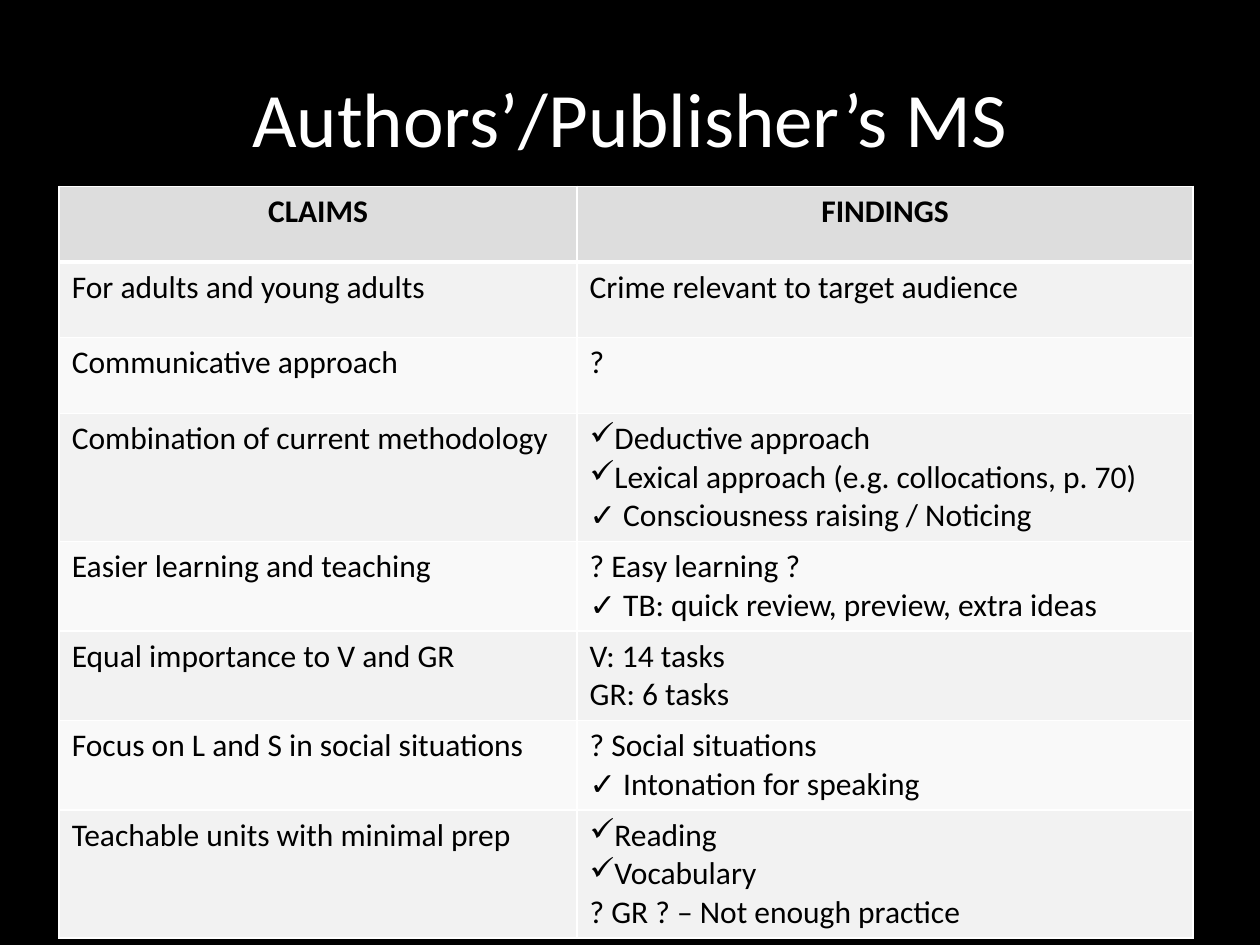
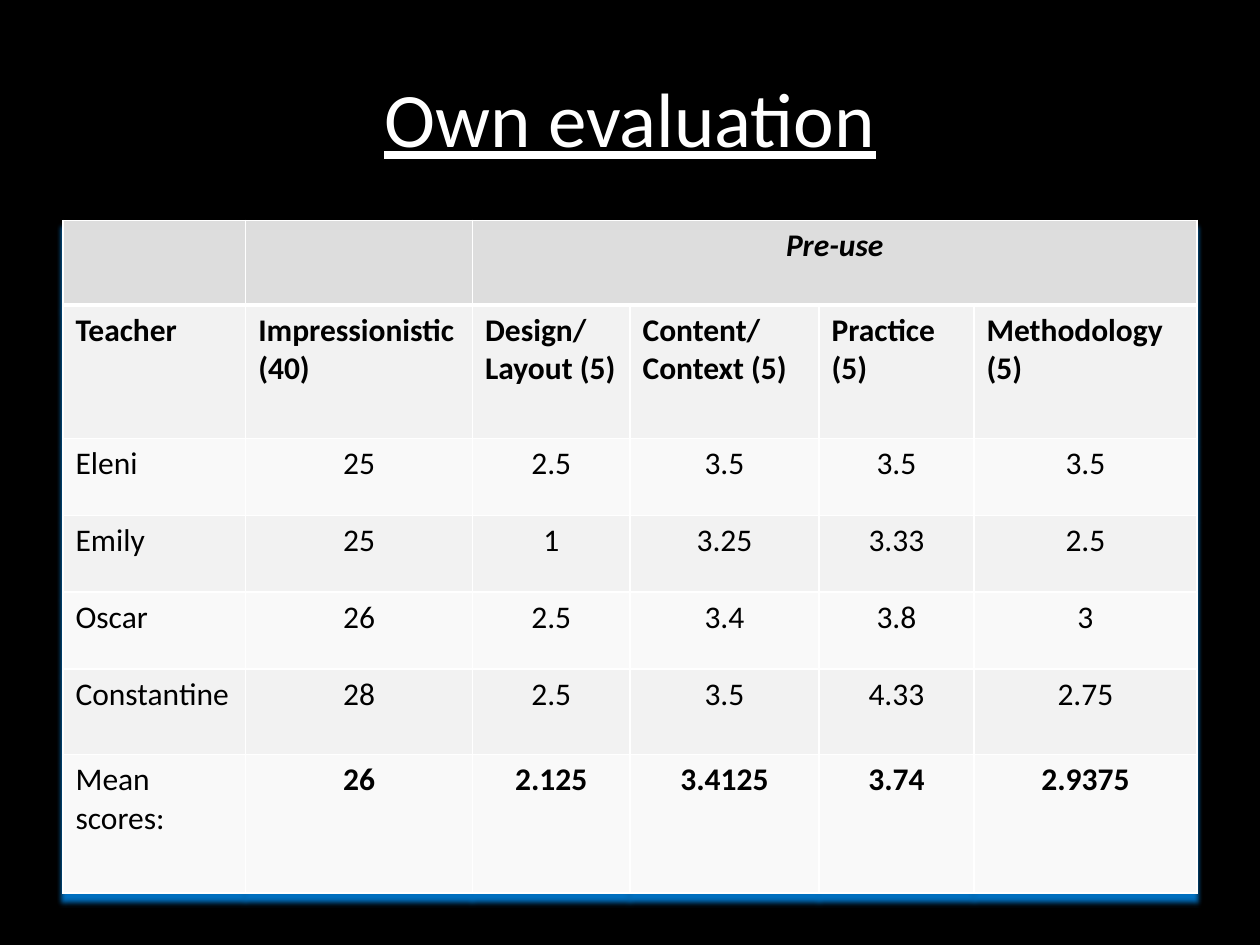
from lxml import etree
from pptx import Presentation
from pptx.dml.color import RGBColor
from pptx.enum.text import MSO_ANCHOR, PP_ALIGN
from pptx.oxml.ns import qn
from pptx.util import Inches, Pt

CENTER, LEFT = PP_ALIGN.CENTER, PP_ALIGN.LEFT
MIDDLE = MSO_ANCHOR.MIDDLE
FONT = "Calibri"
TICK = "✓"
TITLE_ONLY = 5
COLORS = {
    "background": "000000",
    "title": "FFFFFF",
    "text": "000000",
    "border": "FFFFFF",
    "header": "DDDDDD",
    "odd": "F2F2F2",
    "even": "F9F9F9",
    "shadow": "0070C0",
}

CLAIMS = [
    ("CLAIMS", ["FINDINGS"]),
    ("For adults and young adults", ["Crime relevant to target audience"]),
    ("Communicative approach", ["?"]),
    ("Combination of current methodology",
     ["✓Deductive approach", "✓Lexical approach (e.g. collocations, p. 70)",
      "✓ Consciousness raising / Noticing"]),
    ("Easier learning and teaching",
     ["? Easy learning ?", "✓ TB: quick review, preview, extra ideas"]),
    ("Equal importance to V and GR", ["V: 14 tasks", "GR: 6 tasks"]),
    ("Focus on L and S in social situations",
     ["? Social situations", "✓ Intonation for speaking"]),
    ("Teachable units with minimal prep",
     ["✓Reading", "✓Vocabulary", "? GR ? – Not enough practice"]),
]

SCORES = [
    ["", "", "Pre-use", "", "", ""],
    ["Teacher", "Impressionistic (40)", "Design/ Layout (5)",
     "Content/ Context (5)", "Practice (5)", "Methodology (5)"],
    ["Eleni", "25", "2.5", "3.5", "3.5", "3.5"],
    ["Emily", "25", "1", "3.25", "3.33", "2.5"],
    ["Oscar", "26", "2.5", "3.4", "3.8", "3"],
    ["Constantine", "28", "2.5", "3.5", "4.33", "2.75"],
    ["Mean scores:", "26", "2.125", "3.4125", "3.74", "2.9375"],
]


def rgb(name):
    """Return the named colour."""
    return RGBColor.from_string(COLORS[name])


def style_font(font, size, color, bold=False):
    """Apply the shared typeface with a size, colour and weight."""
    font.name, font.size, font.bold = FONT, Pt(size), bold
    font.color.rgb = rgb(color)


def add_title_slide(prs, title, underline=False):
    """Add a title-only slide with the shared title style."""
    s = prs.slides.add_slide(prs.slide_layouts[TITLE_ONLY])
    sp = s.shapes.title
    sp.left, sp.top, sp.width, sp.height = map(Inches, (0.5, 0.3, 9, 1.25))
    tf = sp.text_frame
    tf.text = title
    tf.vertical_anchor = MIDDLE
    p = tf.paragraphs[0]
    p.alignment = CENTER
    style_font(p.font, 44, "title")
    p.font.underline = underline
    return s


def add_color(parent, name):
    """Append a named colour element to an XML parent."""
    etree.SubElement(parent, qn("a:srgbClr"), val=COLORS[name])


def set_borders(cell, row):
    """Draw white cell borders, thicker under the header row."""
    tcPr = cell._tc.get_or_add_tcPr()
    widths = {"L": 1, "R": 1, "T": 3 if row == 1 else 1, "B": 3 if row == 0 else 1}
    for side, width in widths.items():
        ln = etree.SubElement(tcPr, qn(f"a:ln{side}"), w=str(Pt(width)))
        add_color(etree.SubElement(ln, qn("a:solidFill")), "border")


def set_tick_bullet(p):
    """Give a paragraph a tick bullet without an indent."""
    pPr = p._p.get_or_add_pPr()
    pPr.set("marL", "0")
    pPr.set("indent", "0")
    bullet = etree.Element(qn("a:buChar"), char=TICK)
    pPr.insert(0, bullet)


def fill_cell(cell, lines, align=LEFT, bold=False):
    """Write the lines of a cell, one paragraph each."""
    tf = cell.text_frame
    for i, line in enumerate(lines):
        p = tf.add_paragraph() if i else tf.paragraphs[0]
        ticked = line.startswith(TICK) and not line.startswith(TICK + " ")
        p.text = line.removeprefix(TICK) if ticked else line
        p.alignment = align
        style_font(p.font, 18, "text", bold)
        if ticked:
            set_tick_bullet(p)


def add_banded_table(s, left, top, widths, heights):
    """Add an empty table with a header, banded rows and borders."""
    frame = s.shapes.add_table(len(heights), len(widths), Inches(left), Inches(top),
                               Inches(sum(widths)), Inches(sum(heights)))
    table = frame.table
    for column, width in zip(table.columns, widths):
        column.width = Inches(width)
    for i, (row, height) in enumerate(zip(table.rows, heights)):
        row.height = Inches(height)
        band = "header" if i == 0 else "odd" if i % 2 else "even"
        for cell in row.cells:
            set_borders(cell, i)
            cell.fill.solid()
            cell.fill.fore_color.rgb = rgb(band)
    return table


def add_table_shadow(table):
    """Cast a soft blue shadow below a table."""
    effects = etree.Element(qn("a:effectLst"))
    shadow = etree.SubElement(effects, qn("a:outerShdw"), blurRad=str(Inches(0.04)),
                              dist=str(Inches(0.06)), dir="5400000",
                              algn="t", rotWithShape="0")
    add_color(shadow, "shadow")
    table._tbl.tblPr.insert(0, effects)


def add_claims_slide(prs):
    """Compare the claims with the findings."""
    s = add_title_slide(prs, "Authors’/Publisher’s MS")
    table = add_banded_table(s, 0.47, 1.48, [4.11, 4.89], [0.6] * len(CLAIMS))
    for i, (claim, findings) in enumerate(CLAIMS):
        align = LEFT if i else CENTER
        fill_cell(table.cell(i, 0), [claim], align, i == 0)
        fill_cell(table.cell(i, 1), findings, align, i == 0)


def add_scores_slide(prs):
    """Show each teacher's scores and their means."""
    s = add_title_slide(prs, "Own evaluation", underline=True)
    table = add_banded_table(s, 0.5, 1.75, [1.45, 1.8, 1.25, 1.5, 1.23, 1.77],
                             [0.67, 1.06, 0.61, 0.61, 0.61, 0.68, 1.1])
    add_table_shadow(table)
    last = len(SCORES) - 1
    for i, row in enumerate(SCORES):
        for j, value in enumerate(row):
            align = CENTER if i != 1 and j else LEFT
            bold = i < 2 or (i == last and j > 0)
            fill_cell(table.cell(i, j), [value], align, bold)
    pre_use = table.cell(0, 2)
    pre_use.merge(table.cell(0, 5))
    pre_use.text_frame.paragraphs[0].font.italic = True


def main():
    """Build and save the presentation."""
    prs = Presentation()
    prs.slide_width, prs.slide_height = Inches(10), Inches(7.5)
    fill = prs.slide_master.background.fill
    fill.solid()
    fill.fore_color.rgb = rgb("background")
    add_claims_slide(prs)
    add_scores_slide(prs)
    prs.save("out.pptx")


if __name__ == "__main__":
    main()
